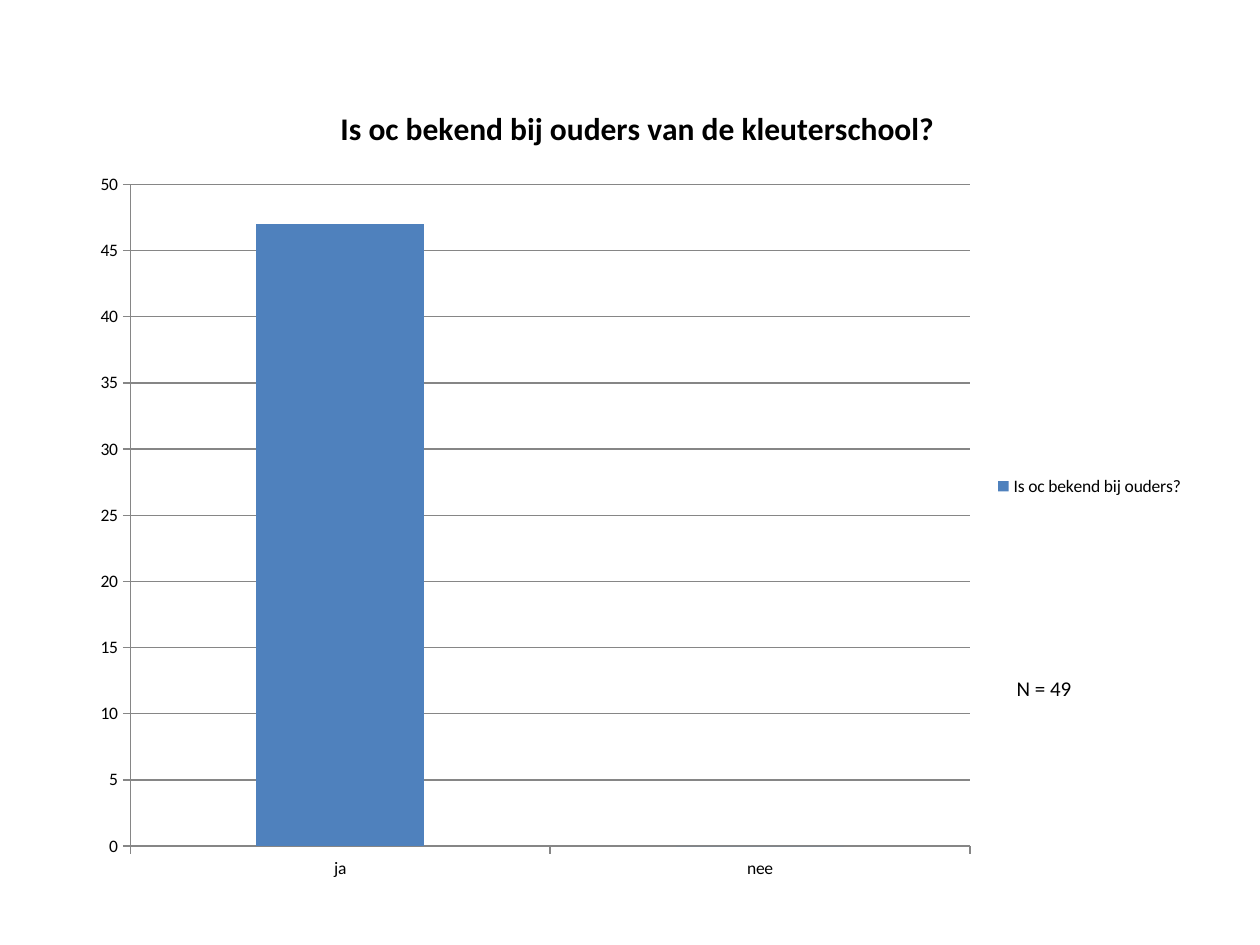
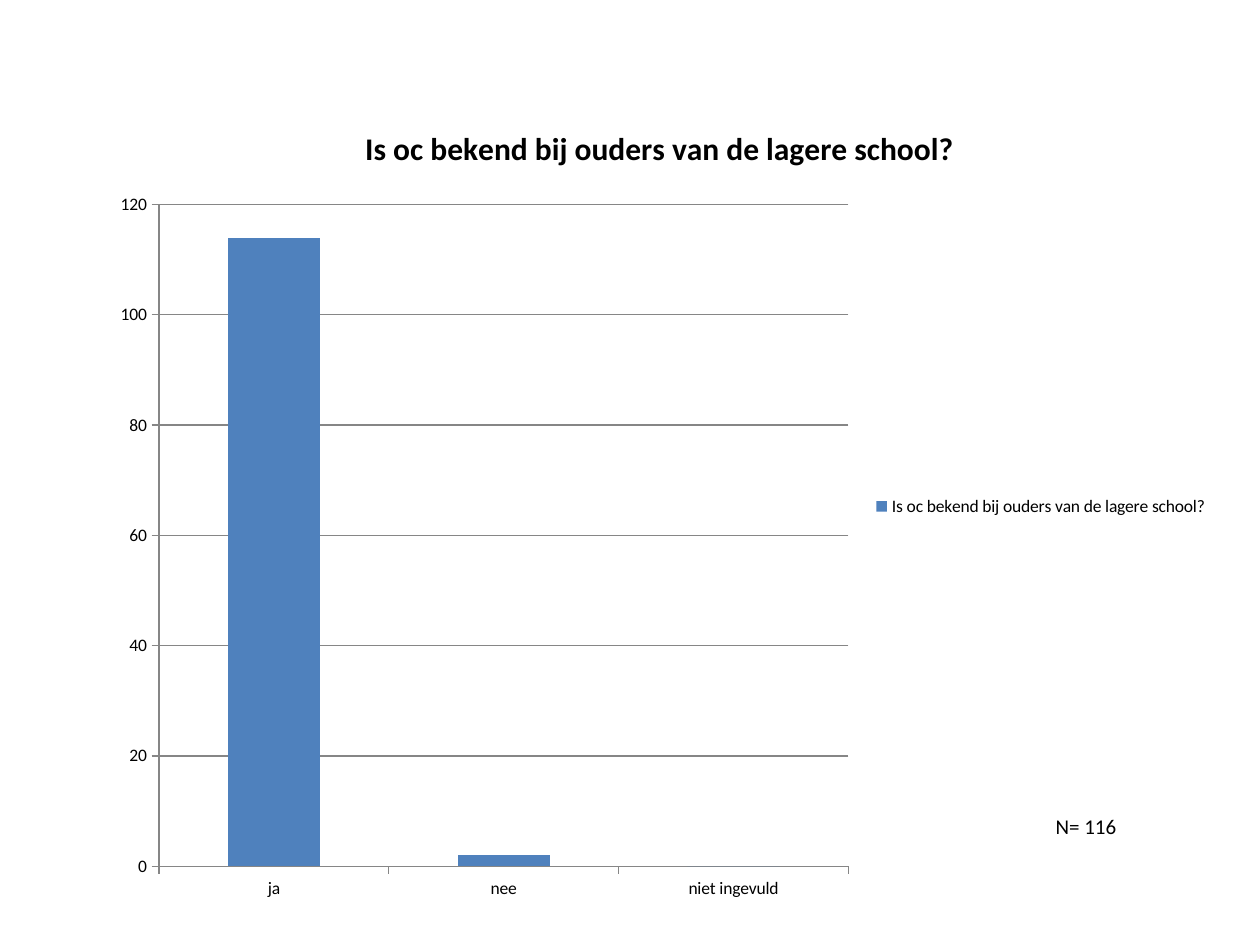
import pptx
import pptx.chart.data
import pptx.dml.color
import pptx.enum.chart
import pptx.enum.text
import pptx.util

SCALE = 9144
FONT = "Calibri"
BLACK = "000000"
BAR_BLUE = "4F81BD"
AXIS_GREY = "868686"
BLANK_LAYOUT = 6

SURVEYS = [
    {
        "title": "Is oc bekend bij ouders van de kleuterschool?",
        "series": "Is oc bekend bij ouders?",
        "answers": {"ja": 47, "nee": 0},
        "top_value": 50,
        "step": 5,
        "chart_box": (62, 62, 888, 648),
        "count": "N = 49",
        "count_box": (797, 531, 117, 30),
    },
    {
        "title": "Is oc bekend bij ouders van de lagere school?",
        "series": "Is oc bekend bij ouders van de lagere school?",
        "answers": {"ja": 114, "nee": 2, "niet ingevuld": 0},
        "top_value": 120,
        "step": 20,
        "chart_box": (78, 78, 891, 648),
        "count": "N= 116",
        "count_box": (828, 641, 125, 30),
    },
]


def px(length):
    """Turn px into EMU."""
    return pptx.util.Emu(length * SCALE)


def color(value):
    """Turn a hex string into a colour."""
    return pptx.dml.color.RGBColor.from_string(value)


def format_font(font, size, bold=False, fill=BLACK):
    """Set the face, size, weight and colour of a font."""
    font.name = FONT
    font.size = pptx.util.Pt(size)
    font.bold = bold
    font.color.rgb = color(fill)


def write_text(frame, text, **text_format):
    """Write one formatted line into a text frame."""
    span = frame.paragraphs[0].add_run()
    span.text = text
    format_font(span.font, **text_format)


def style_line(line):
    """Give an axis or grid line its grey hairline."""
    line.color.rgb = color(AXIS_GREY)
    line.width = pptx.util.Pt(0.75)


def style_axes(chart, top_value, step):
    """Set the scale, ticks and lines of both axes."""
    for axis in (chart.category_axis, chart.value_axis):
        axis.major_tick_mark = pptx.enum.chart.XL_TICK_MARK.OUTSIDE
        axis.minor_tick_mark = pptx.enum.chart.XL_TICK_MARK.NONE
        style_line(axis.format.line)
    values = chart.value_axis
    values.minimum_scale = 0
    values.maximum_scale = top_value
    values.major_unit = step
    values.has_major_gridlines = True
    style_line(values.major_gridlines.format.line)


def add_answer_chart(page, box, survey):
    """Add the column chart with the answers to one question."""
    data = pptx.chart.data.CategoryChartData()
    data.categories = list(survey["answers"])
    data.add_series(survey["series"], list(survey["answers"].values()))
    chart = page.shapes.add_chart(
        pptx.enum.chart.XL_CHART_TYPE.COLUMN_CLUSTERED, *map(px, box), data
    ).chart
    format_font(chart.font, size=10)
    chart.has_title = True
    write_text(chart.chart_title.text_frame, survey["title"], size=18, bold=True)
    chart.chart_title.include_in_layout = False
    chart.has_legend = True
    chart.legend.position = pptx.enum.chart.XL_LEGEND_POSITION.RIGHT
    chart.legend.include_in_layout = False
    style_axes(chart, survey["top_value"], survey["step"])
    plot = chart.plots[0]
    plot.gap_width = 150
    plot.vary_by_categories = False
    bars = plot.series[0].format.fill
    bars.solid()
    bars.fore_color.rgb = color(BAR_BLUE)


def add_count(page, box, text):
    """Add the note with the number of respondents."""
    frame = page.shapes.add_textbox(*map(px, box)).text_frame
    frame.word_wrap = True
    frame.auto_size = pptx.enum.text.MSO_AUTO_SIZE.SHAPE_TO_FIT_TEXT
    write_text(frame, text, size=12)


def add_survey_page(deck, survey):
    """Add a slide with one chart and its respondent count."""
    page = deck.slides.add_slide(deck.slide_layouts[BLANK_LAYOUT])
    add_answer_chart(page, survey["chart_box"], survey)
    add_count(page, survey["count_box"], survey["count"])


def main():
    """Build and save the deck."""
    deck = pptx.Presentation()
    deck.slide_width, deck.slide_height = px(1000), px(750)
    for survey in SURVEYS:
        add_survey_page(deck, survey)
    deck.save("out.pptx")


if __name__ == "__main__":
    main()
